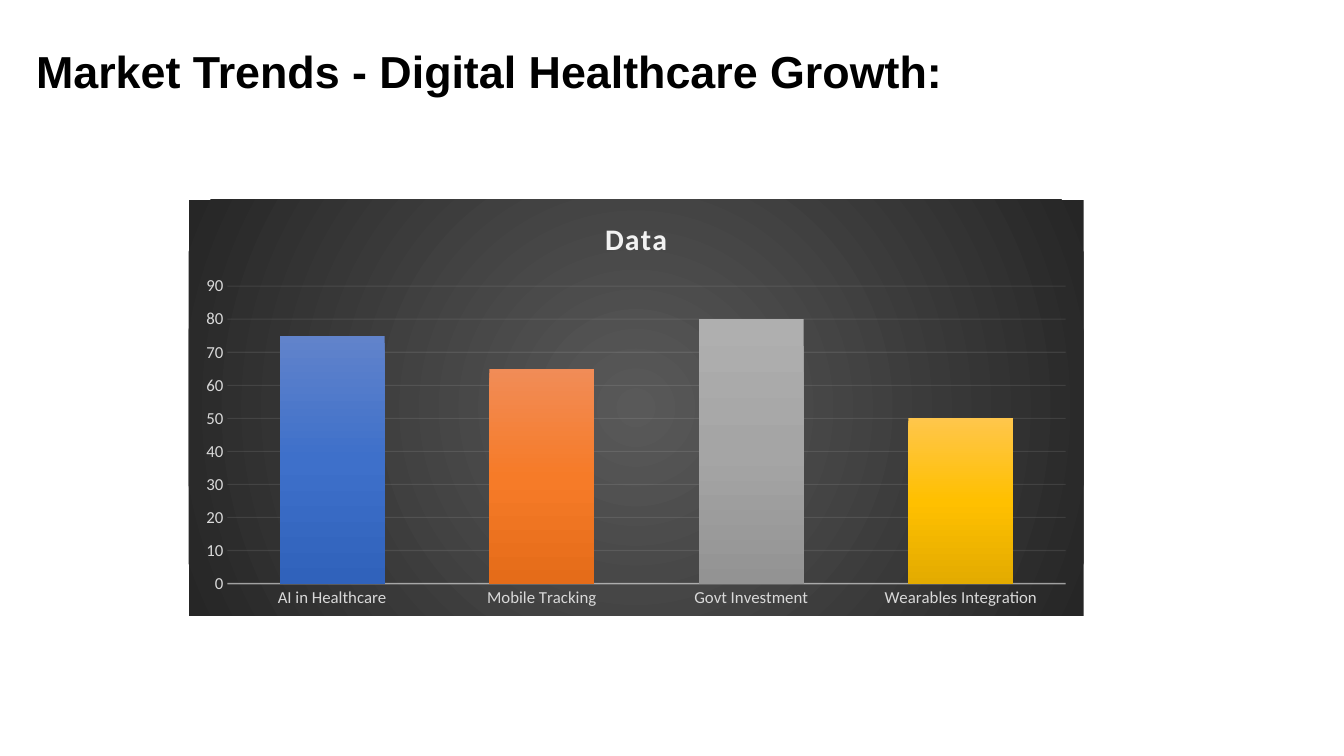
"""Build the market trends slide with its digital healthcare column chart."""
from pptx import Presentation
from pptx.chart.data import CategoryChartData
from pptx.dml.color import RGBColor
from pptx.enum.chart import XL_CHART_TYPE, XL_TICK_MARK
from pptx.enum.text import MSO_ANCHOR
from pptx.oxml import parse_xml
from pptx.oxml.ns import nsdecls
from pptx.util import Pt

COLORS = {"heading": "000000", "chart_title": "F2F2F2", "axis_text": "D9D9D9",
          "rule": "F2F2F2", "center": "595959", "edge": "262626"}
TRENDS = {
    "AI in Healthcare": (75, ("6183CB", "3E70CA", "3062BB")),
    "Mobile Tracking": (65, ("F18C57", "F67B28", "E56C19")),
    "Govt Investment": (80, ("AFAFAF", "A5A5A5", "939393")),
    "Wearables Integration": (50, ("FFC64B", "FFC000", "E3AB00")),
}
DOWNWARD = '<a:lin ang="5400000" scaled="0"/>'
OUTWARD = ('<a:path path="circle"><a:fillToRect l="50000" t="50000" '
           'r="50000" b="50000"/></a:path>')


def gradient(shades, direction):
    step = 100000 // (len(shades) - 1)
    stops = "".join(f'<a:gs pos="{i * step}"><a:srgbClr val="{shade}"/></a:gs>'
                    for i, shade in enumerate(shades))
    return f'<a:gradFill {nsdecls("a")}><a:gsLst>{stops}</a:gsLst>{direction}</a:gradFill>'


def style_font(font, values, color):
    for attribute, value in values.items():
        setattr(font, attribute, value)
    font.color.rgb = RGBColor.from_string(COLORS[color])


presentation = Presentation()
presentation.slide_width, presentation.slide_height = Pt(960), Pt(540)
slide = presentation.slides.add_slide(presentation.slide_layouts[6])

heading = slide.shapes.add_textbox(Pt(18.72), Pt(28.8), Pt(875.52), Pt(48.24)).text_frame
heading.word_wrap = True
heading.vertical_anchor = MSO_ANCHOR.MIDDLE
heading_line = heading.paragraphs[0]
heading_line.line_spacing = 0.9
heading_run = heading_line.add_run()
heading_run.text = "Market Trends - Digital Healthcare Growth:"
style_font(heading_run.font, {"name": "Arial", "size": Pt(32), "bold": True}, "heading")

growth = CategoryChartData()
growth.categories = list(TRENDS)
growth.add_series("Data", [value for value, shades in TRENDS.values()])
chart = slide.shapes.add_chart(XL_CHART_TYPE.COLUMN_CLUSTERED, Pt(134.64), Pt(142.56),
                               Pt(639.36), Pt(297.36), growth).chart
chart.has_legend = False
style_font(chart.font, {"name": "Calibri", "size": Pt(10)}, "heading")

chart.has_title = True
title_run = chart.chart_title.text_frame.paragraphs[0].add_run()
title_run.text = "Data"
style_font(title_run.font, {"name": "Calibri", "size": Pt(21.3), "bold": True}, "chart_title")
chart.element.xpath(".//c:title//a:rPr")[0].set("spc", "100")
chart.chart_title.include_in_layout = False

columns = chart.plots[0]
columns.gap_width, columns.overlap, columns.vary_by_categories = 100, -24, False
for index, (value, shades) in enumerate(TRENDS.values()):
    columns.series[0].points[index].format.fill.solid()
    solid = chart.element.xpath(".//c:dPt/c:spPr/a:solidFill")[0]
    solid.getparent().replace(solid, parse_xml(gradient(shades, DOWNWARD)))

for axis in (chart.category_axis, chart.value_axis):
    axis.major_tick_mark = axis.minor_tick_mark = XL_TICK_MARK.NONE
    style_font(axis.tick_labels.font, {"name": "Calibri", "size": Pt(12)}, "axis_text")
value_axis = chart.value_axis
value_axis.minimum_scale, value_axis.maximum_scale, value_axis.major_unit = 0, 90, 10
value_axis.format.line.fill.background()

rules = [(chart.category_axis.format.line, 1, 54, ".//c:catAx/c:spPr"),
         (value_axis.major_gridlines.format.line, 0.75, 10, ".//c:majorGridlines/c:spPr")]
for line, width, opacity, place in rules:
    line.width = Pt(width)
    line.color.rgb = RGBColor.from_string(COLORS["rule"])
    tint = chart.element.xpath(f"{place}/a:ln/a:solidFill/a:srgbClr")[0]
    tint.append(parse_xml(f'<a:alpha {nsdecls("a")} val="{opacity * 1000}"/>'))

backdrop = gradient((COLORS["center"], COLORS["edge"]), OUTWARD)
chart.element.xpath("c:chart")[0].addnext(parse_xml(
    f'<c:spPr {nsdecls("c", "a")}>{backdrop}<a:ln><a:noFill/></a:ln></c:spPr>'))

presentation.save("out.pptx")
